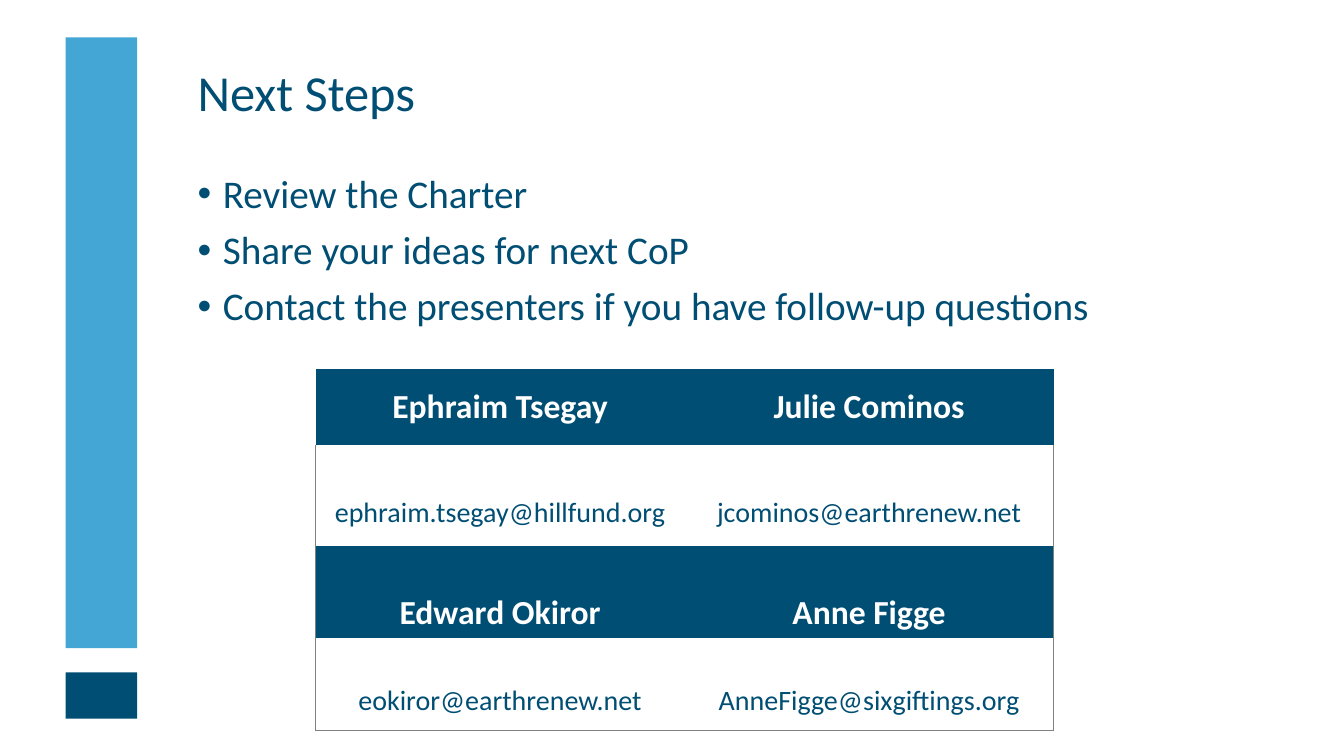
from lxml.etree import SubElement
from pptx import Presentation
from pptx.dml.color import RGBColor
from pptx.enum.shapes import MSO_SHAPE
from pptx.enum.text import MSO_ANCHOR, MSO_AUTO_SIZE, PP_ALIGN
from pptx.oxml import parse_xml
from pptx.oxml.ns import nsdecls, qn
from pptx.util import Inches, Pt

NAVY = RGBColor(0x00, 0x4E, 0x73)
SKY = RGBColor(0x43, 0xA6, 0xD4)
WHITE = RGBColor(0xFF, 0xFF, 0xFF)
GRAY = RGBColor(0x80, 0x80, 0x80)
PLAIN_TABLE = "{2D5ABB26-0587-4C30-8999-92F81FD0307C}"

STEPS = [
    "Review the Charter",
    "Share your ideas for next CoP",
    "Contact the presenters if you have follow-up questions",
]
CONTACTS = [
    ("Ephraim Tsegay", "Julie Cominos"),
    ("ephraim.tsegay@hillfund.org", "jcominos@earthrenew.net"),
    ("Edward Okiror", "Anne Figge"),
    ("eokiror@earthrenew.net", "AnneFigge@sixgiftings.org"),
]
ROW_HEIGHTS = [0.75, 1.01, 0.91, 0.91]


class SlideBuilder:
    """Holds the style and the current slide."""

    font = "Calibri"

    def __init__(self, prs):
        self.slide = prs.slides.add_slide(prs.slide_layouts[1])

    def run(self, p, text, size, color, bold=False):
        r = p.add_run()
        r.text = text
        r.font.name = self.font
        r.font.size = Pt(size)
        r.font.bold = bold
        r.font.color.rgb = color

    def place(self, sp, left, top, width, height):
        sp.left, sp.top = Inches(left), Inches(top)
        sp.width, sp.height = Inches(width), Inches(height)
        tf = sp.text_frame
        tf.word_wrap = True
        tf.auto_size = MSO_AUTO_SIZE.NONE
        tf.vertical_anchor = MSO_ANCHOR.TOP
        return tf

    def title(self, text, *box):
        p = self.place(self.slide.shapes.title, *box).paragraphs[0]
        p.alignment = PP_ALIGN.LEFT
        p.line_spacing = 0.9
        p.space_before = Pt(0)
        self.run(p, text, 36, NAVY)

    def bullets(self, items, *box):
        tf = self.place(self.slide.placeholders[1], *box)
        for i, text in enumerate(items):
            p = tf.add_paragraph() if i else tf.paragraphs[0]
            p.line_spacing = 0.9
            p.space_before = Pt(10 if i else 0)
            pPr = p._p.get_or_add_pPr()
            pPr.set("marL", str(Inches(0.25)))
            pPr.set("indent", str(-Inches(0.25)))
            SubElement(pPr, qn("a:buFont"), typeface="Arial")
            SubElement(pPr, qn("a:buChar"), char="•")
            self.run(p, text, 28, NAVY)

    def bars(self, left, width, parts):
        group = self.slide.shapes.add_group_shape()
        for top, height, color in parts:
            sp = group.shapes.add_shape(
                MSO_SHAPE.RECTANGLE, Inches(left), Inches(top), Inches(width), Inches(height))
            sp.shadow.inherit = False
            sp.fill.solid()
            sp.fill.fore_color.rgb = color
            sp.line.fill.background()

    def border(self, cell, sides):
        tcPr = cell._tc.get_or_add_tcPr()
        for i, side in enumerate(sides):
            tcPr.insert(i, parse_xml(
                f'<a:ln{side} {nsdecls("a")} w="{Pt(0.5)}"><a:solidFill>'
                f'<a:srgbClr val="{GRAY}"/></a:solidFill></a:ln{side}>'))

    def table(self, rows, heights, left, top, width):
        frame = self.slide.shapes.add_table(
            len(rows), 2, Inches(left), Inches(top), Inches(width), Inches(sum(heights)))
        table = frame.table
        table.first_row = table.horz_banding = False
        table._tbl.tblPr.find(qn("a:tableStyleId")).text = PLAIN_TABLE
        for i, (texts, height) in enumerate(zip(rows, heights)):
            table.rows[i].height = Inches(height)
            is_name = i % 2 == 0
            for j, text in enumerate(texts):
                cell = table.cell(i, j)
                cell.vertical_anchor = MSO_ANCHOR.MIDDLE
                if is_name:
                    cell.fill.solid()
                    cell.fill.fore_color.rgb = NAVY
                else:
                    cell.fill.background()
                if i:
                    bottom = ["B"] if i == len(rows) - 1 else []
                    self.border(cell, ["LR"[j]] + bottom)
                p = cell.text_frame.paragraphs[0]
                p.alignment = PP_ALIGN.CENTER
                p.line_spacing = 2.0 if i else 1.0
                self.run(p, text, 24 if is_name else 20, WHITE if is_name else NAVY, is_name)


def main():
    prs = Presentation()
    prs.slide_width, prs.slide_height = Inches(13.33), Inches(7.5)
    page = SlideBuilder(prs)
    page.title("Next Steps", 1.86, 0.62, 9.86, 0.91)
    page.bullets(STEPS, 1.86, 1.68, 10.77, 5.45)
    page.bars(0.65, 0.71, [(0.37, 6.06, SKY), (6.67, 0.46, NAVY)])
    page.table(CONTACTS, ROW_HEIGHTS, 3.13, 3.66, 7.32)
    prs.save("out.pptx")


if __name__ == "__main__":
    main()
